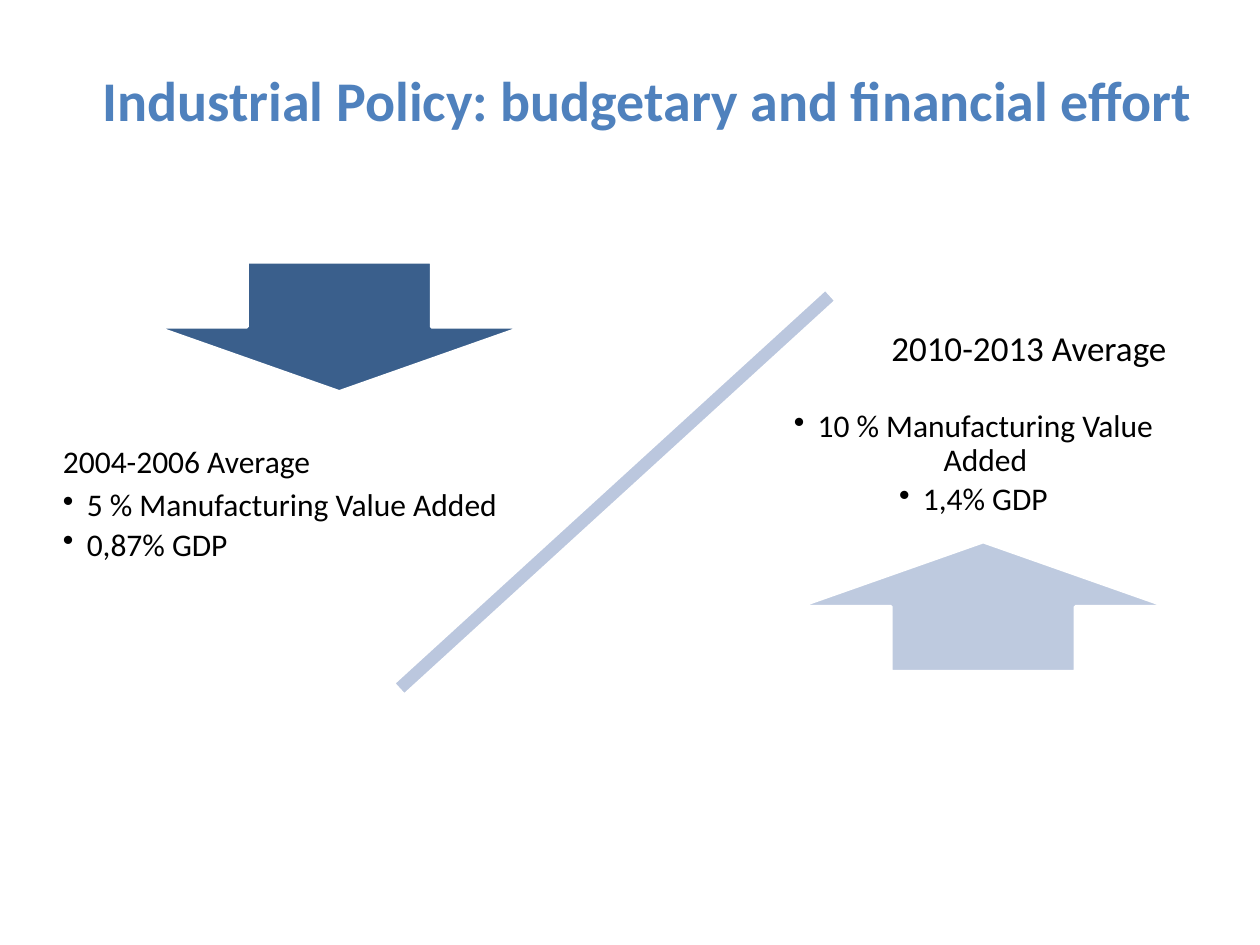
from lxml import etree
from pptx import Presentation
from pptx.dml.color import RGBColor
from pptx.enum.shapes import MSO_SHAPE
from pptx.enum.text import MSO_ANCHOR, PP_ALIGN
from pptx.oxml.ns import qn
from pptx.util import Cm, Pt

LEFT, MID, RIGHT = PP_ALIGN.LEFT, PP_ALIGN.CENTER, PP_ALIGN.RIGHT
TOP, CENTER = MSO_ANCHOR.TOP, MSO_ANCHOR.MIDDLE
MINUS, DOWN, UP = MSO_SHAPE.MATH_MINUS, MSO_SHAPE.DOWN_ARROW, MSO_SHAPE.UP_ARROW

SHAPES = [
    (MINUS, (4.37, 9.22, 16.05, 1.4), "BBC7DE", 317.6),
    (DOWN, (3.12, 5.28, 7.44, 2.62), "3A5F8C", 0),
    (UP, (16.1, 10.92, 7.44, 2.62), "BECADF", 0),
]
# text, size, bold, colour, align, bullet, line spacing, space after
TITLE = [("Industrial Policy: budgetary and financial effort",
          32, True, "4F81BD", MID, False, 1, 0)]
BEFORE = [
    ("2004-2006 Average", 18, False, "000000", LEFT, False, 0.9, 5.5),
    ("5 % Manufacturing Value Added", 18, False, "000000", LEFT, True, 0.9, 3),
    ("0,87% GDP", 18, False, "000000", LEFT, True, 0.9, 3),
]
AFTER = [
    ("2010-2013 Average", 20, False, "000000", RIGHT, False, 1, 24),
    ("10 % Manufacturing Value Added", 18, False, "000000", MID, True, 0.9, 3),
    ("1,4% GDP", 18, False, "000000", MID, True, 0.9, 3),
]
TEXTS = [
    (TITLE, (0.71, 0.91, 24.69, 2.16), CENTER, 0.25, 0.13),
    (BEFORE, (0.91, 8.56, 12.4, 3.94), TOP, 0.36, 0.43),
    (AFTER, (15.32, 6.53, 8.61, 3.96), CENTER, 0.41, 0.41),
]


def tint(code):
    return RGBColor.from_string(code)


def dot(para):
    props = para._p.get_or_add_pPr()
    props.set("marL", str(Cm(0.48)))
    props.set("indent", str(-Cm(0.48)))
    etree.SubElement(props, qn("a:buChar")).set("char", "•")


def draw(slide, kind, box, fill, turn):
    shape = slide.shapes.add_shape(kind, *map(Cm, box))
    shape.rotation = turn
    shape.shadow.inherit = False
    shape.fill.solid()
    shape.fill.fore_color.rgb = tint(fill)
    shape.line.color.rgb = tint("FFFFFF")
    shape.line.width = Pt(2)


def write(slide, rows, box, anchor, side, edge):
    frame = slide.shapes.add_textbox(*map(Cm, box)).text_frame
    frame.word_wrap = True
    frame.vertical_anchor = anchor
    frame.margin_left = frame.margin_right = Cm(side)
    frame.margin_top = frame.margin_bottom = Cm(edge)
    frame.text = "\n".join(row[0] for row in rows)
    for para, row in zip(frame.paragraphs, rows):
        _, size, bold, color, align, mark, lead, after = row
        para.alignment = align
        para.line_spacing = lead
        para.space_after = Pt(after)
        if mark:
            dot(para)
        font = para.runs[0].font
        font.name = "Calibri"
        font.size = Pt(size)
        font.bold = bold
        font.color.rgb = tint(color)


def main():
    deck = Presentation()
    deck.slide_width, deck.slide_height = Cm(25.4), Cm(19.05)
    slide = deck.slides.add_slide(deck.slide_layouts[6])
    for item in SHAPES:
        draw(slide, *item)
    for item in TEXTS:
        write(slide, *item)
    deck.save("out.pptx")


if __name__ == "__main__":
    main()
